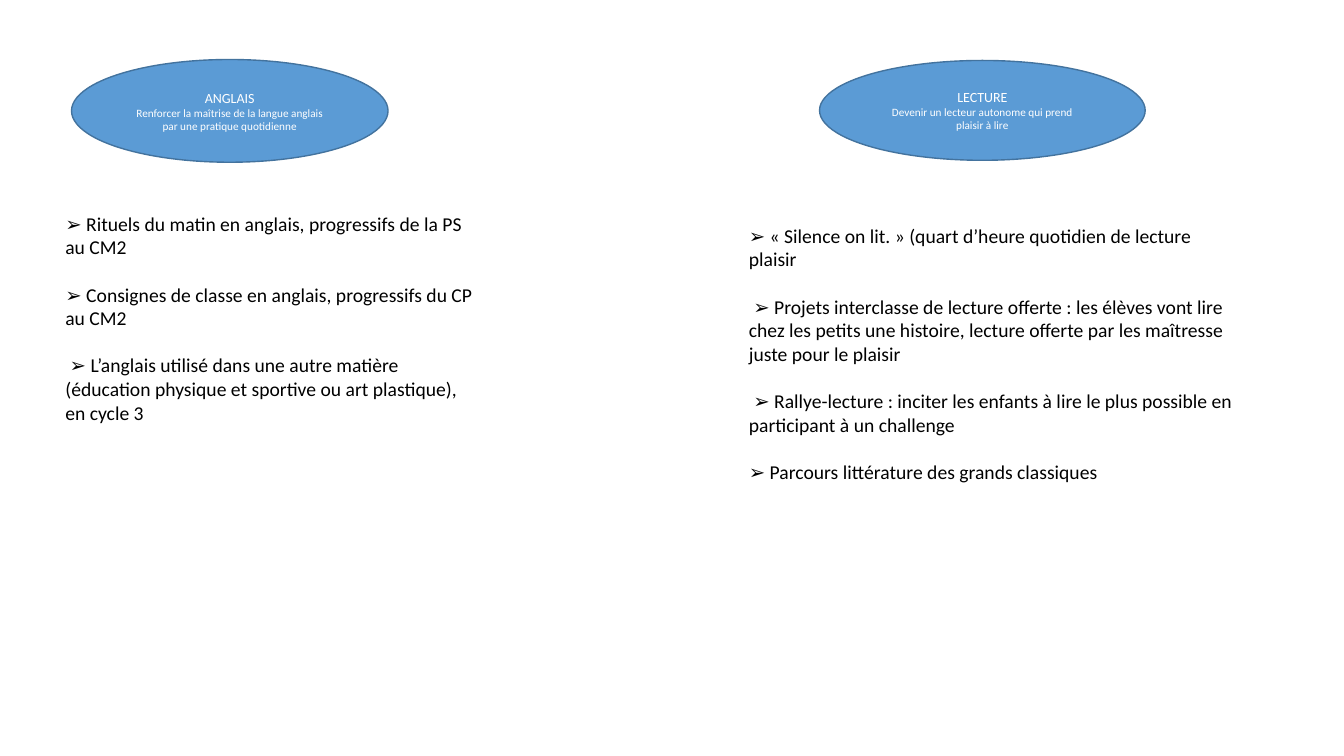
from pptx import Presentation
from pptx.dml.color import RGBColor
from pptx.enum.shapes import MSO_SHAPE
from pptx.enum.text import MSO_ANCHOR, MSO_AUTO_SIZE, PP_ALIGN
from pptx.util import Pt

OVAL = MSO_SHAPE.OVAL
MIDDLE = MSO_ANCHOR.MIDDLE
GROW = MSO_AUTO_SIZE.SHAPE_TO_FIT_TEXT
CENTER, LEFT = PP_ALIGN.CENTER, PP_ALIGN.LEFT

FONT = "Calibri"
COLORS = {"oval": "5B9BD5", "outline": "43739E", "title": "FFFFFF", "body": "000000"}
ACTION_GAP = 17  # one line of body text

# Each subject: heading, goal, oval box, actions, actions box (left, top, width, height)
SUBJECTS = [
    (
        "ANGLAIS",
        "Renforcer la maîtrise de la langue anglais par une pratique quotidienne",
        (51.1, 42.5, 226.1, 73.4),
        [
            "➢ Rituels du matin en anglais, progressifs de la PS au CM2",
            "➢ Consignes de classe en anglais, progressifs du CP au CM2",
            " ➢ L’anglais utilisé dans une autre matière (éducation physique et "
            "sportive ou art plastique), en cycle 3",
        ],
        (39.6, 147.6, 309.6, 159.8),
    ),
    (
        "LECTURE",
        "Devenir un lecteur autonome qui prend plaisir à lire",
        (585.4, 43.2, 232.6, 71.3),
        [
            "➢ « Silence on lit. » (quart d’heure quotidien de lecture plaisir",
            " ➢ Projets interclasse de lecture offerte : les élèves vont lire chez "
            "les petits une histoire, lecture offerte par les maîtresse juste pour "
            "le plaisir",
            " ➢ Rallye-lecture : inciter les enfants à lire le plus possible en "
            "participant à un challenge",
            "➢ Parcours littérature des grands classiques",
        ],
        (527.8, 156.2, 365.8, 193.7),
    ),
]


def color(name):
    return RGBColor.from_string(COLORS[name])


def format_paragraph(paragraph, size, color_name, alignment):
    paragraph.alignment = alignment
    for run in paragraph.runs:
        run.font.name = FONT
        run.font.size = Pt(size)
        run.font.color.rgb = color(color_name)


def add_subject_oval(slide, heading, goal, box):
    oval = slide.shapes.add_shape(OVAL, *map(Pt, box))
    oval.shadow.inherit = False
    oval.fill.solid()
    oval.fill.fore_color.rgb = color("oval")
    oval.line.color.rgb = color("outline")
    oval.line.width = Pt(1)
    frame = oval.text_frame
    frame.word_wrap = True
    frame.vertical_anchor = MIDDLE
    frame.text = f"{heading}\n{goal}"
    for paragraph, size in zip(frame.paragraphs, (10, 8)):
        format_paragraph(paragraph, size, "title", CENTER)


def add_actions(slide, actions, box):
    frame = slide.shapes.add_textbox(*map(Pt, box)).text_frame
    frame.word_wrap = True
    frame.auto_size = GROW
    frame.text = "\n".join(actions)
    for index, paragraph in enumerate(frame.paragraphs):
        format_paragraph(paragraph, 14, "body", LEFT)
        if index:
            paragraph.space_before = Pt(ACTION_GAP)


def main():
    presentation = Presentation()
    presentation.slide_width = Pt(960)
    presentation.slide_height = Pt(540)
    slide = presentation.slides.add_slide(presentation.slide_layouts[6])

    # One column per subject
    for heading, goal, oval_box, actions, actions_box in SUBJECTS:
        add_subject_oval(slide, heading, goal, oval_box)
        add_actions(slide, actions, actions_box)

    presentation.save("out.pptx")


if __name__ == "__main__":
    main()
